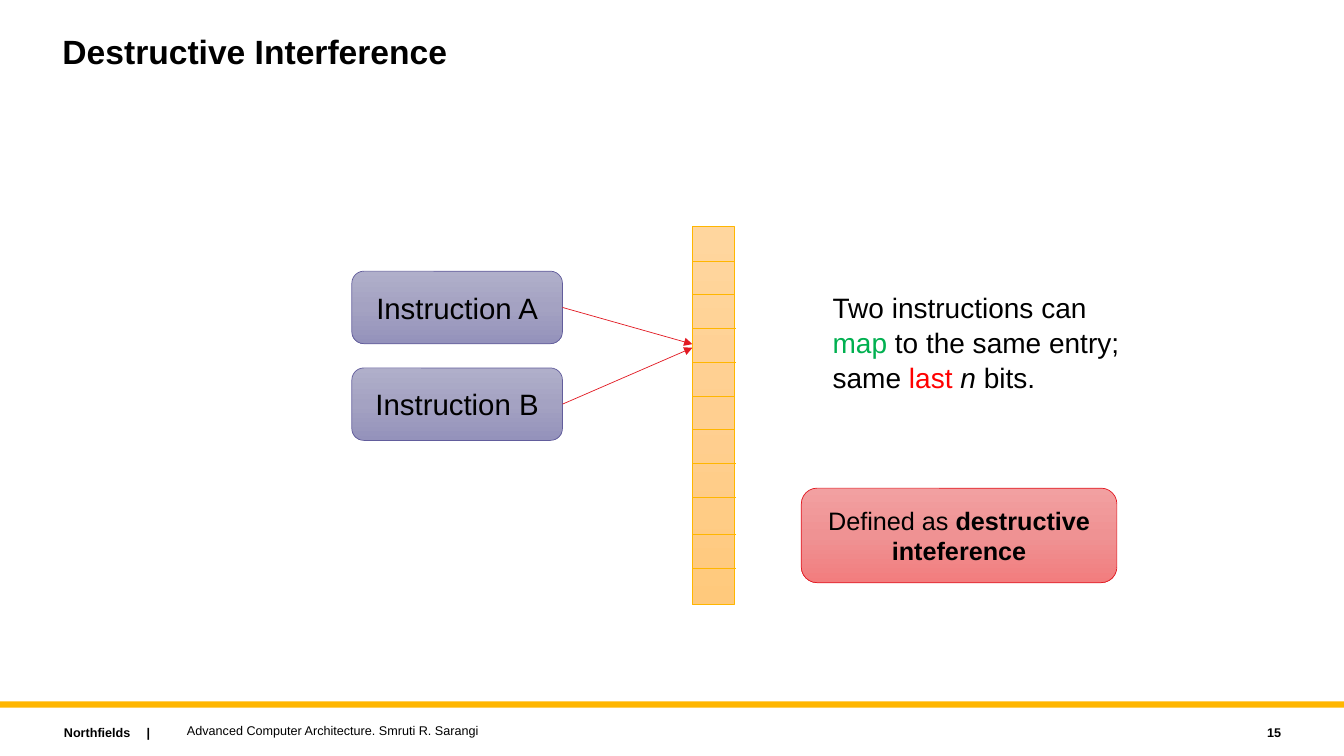
"""Builds the slide on destructive interference."""
from copy import deepcopy
from lxml import etree
from pptx import Presentation
from pptx.dml.color import RGBColor
from pptx.enum import shapes, text
from pptx.oxml import ns
from pptx.util import Pt

INK = {"black": "000000", "gold": "FFB600", "red": "E21A23", "plum": "625D9C",
       "green": "00B050", "bright": "FF0000"}
FADE = {"gold": ("FFD69E", "FFCF90", "FFC97C"),
        "plum": ("B0AFCA", "A4A2C2", "9492BB"),
        "red": ("F2A0A1", "EF9293", "F27D7E")}
KIND = shapes.MSO_SHAPE
ALIGN = text.PP_ALIGN
ANCHOR = text.MSO_ANCHOR


def write(box, runs, size, align=ALIGN.LEFT, anchor=ANCHOR.TOP):
    """Fill a box with runs of (words, colour, bold, italic)."""
    frame = box.text_frame
    frame.word_wrap = True
    frame.auto_size = text.MSO_AUTO_SIZE.NONE
    frame.vertical_anchor = anchor
    para = frame.paragraphs[0]
    para.alignment = align
    para.space_before = Pt(0)
    for words, ink, bold, slant in runs:
        run = para.add_run()
        run.text = words
        font = run.font
        font.name, font.size = "Arial", Pt(size)
        font.bold, font.italic = bold, slant
        font.color.rgb = RGBColor.from_string(INK[ink])
    return para


def block(kind, place, ink):
    """Draw a shape with a vertical fade and a thin outline."""
    box = slide.shapes.add_shape(kind, *map(Pt, place))
    box.shadow.inherit = False
    box.fill.gradient()
    box.fill.gradient_angle = 270
    first = next(box._element.iter(ns.qn("a:gs")))
    first.addnext(deepcopy(first))
    for stop, spot, tint in zip(box.fill.gradient_stops, (0, 0.5, 1), FADE[ink]):
        stop.position = spot
        stop.color.rgb = RGBColor.from_string(tint)
    box.line.color.rgb = RGBColor.from_string(INK[ink])
    box.line.width = Pt(0.5)
    return box


deck = Presentation()
deck.slide_width, deck.slide_height = Pt(960), Pt(540)
slide = deck.slides.add_slide(deck.slide_layouts[1])
title, body = slide.placeholders

rule = slide.shapes.add_shape(KIND.RECTANGLE, Pt(0), Pt(501), Pt(960), Pt(4.5))
rule.shadow.inherit = False
rule.fill.solid()
rule.fill.fore_color.rgb = RGBColor.from_string(INK["gold"])
rule.line.fill.background()

title.left, title.top, title.width, title.height = map(Pt, (37.4, 21.6, 720, 64.8))
head = write(title, [("Destructive Interference", "black", True, False)], 24)
head.line_spacing = 0.9

body.left, body.top, body.width, body.height = map(Pt, (587.5, 203, 236.9, 143.3))
note = [("Two instructions can ", "black", False, False),
        ("map", "green", False, False),
        (" to the same entry; same ", "black", False, False),
        ("last ", "bright", False, False),
        ("n ", "black", False, True),
        ("bits.", "black", False, False)]
para = write(body, note, 20)
para.line_spacing = 1.04
props = para._p.get_or_add_pPr()
props.set("marL", "0")
props.set("indent", "0")
etree.SubElement(props, ns.qn("a:buNone"))

block(KIND.RECTANGLE, (494.6, 162, 29.8, 270), "gold")
wires = []
for row in range(10):
    left = 494.6 + (0.7 if row in (2, 3, 6, 7, 8, 9) else 0)
    y = 186.5 + 24.1 * row + (2.3 if row > 7 else 0)
    wire = slide.shapes.add_connector(
        shapes.MSO_CONNECTOR.STRAIGHT, Pt(left), Pt(y), Pt(left + 30.2), Pt(y))
    wires.append((wire, "gold"))

for name, top, tip in (("A", 193.7, 245.8), ("B", 262.8, 248.4)):
    box = block(KIND.ROUNDED_RECTANGLE, (251.3, top, 150.5, 51.8), "plum")
    write(box, [("Instruction " + name, "black", False, False)], 21,
          ALIGN.CENTER, ANCHOR.MIDDLE)
    wire = slide.shapes.add_connector(
        shapes.MSO_CONNECTOR.STRAIGHT, Pt(401.8), Pt(top + 25.9), Pt(494.6), Pt(tip))
    wire.begin_connect(box, 3)
    wires.append((wire, "red"))

for wire, ink in wires:
    wire.line.color.rgb = RGBColor.from_string(INK[ink])
    wire.line.width = Pt(0.5)
    if ink == "red":
        etree.SubElement(wire.line._get_or_add_ln(), ns.qn("a:tailEnd"), type="triangle")
    etree.SubElement(wire._element.spPr, ns.qn("a:effectLst"))

box = block(KIND.ROUNDED_RECTANGLE, (572.4, 348.7, 225.4, 67.5), "red")
write(box, [("Defined as ", "black", False, False),
            ("destructive inteference", "black", True, False)], 18,
      ALIGN.CENTER, ANCHOR.MIDDLE)

feet = [((38.6, 514.1, 163.4, 18), "Northfields\t|", True, ALIGN.LEFT, ANCHOR.TOP),
        ((126.5, 512.6, 576, 18), "Advanced Computer Architecture. Smruti R. Sarangi",
         False, ALIGN.LEFT, ANCHOR.MIDDLE),
        ((821.5, 514.1, 100.8, 18), "15", True, ALIGN.RIGHT, ANCHOR.MIDDLE)]
for place, words, bold, align, anchor in feet:
    box = slide.shapes.add_textbox(*map(Pt, place))
    para = write(box, [(words, "black", bold, False)], 9, align, anchor)
    if "\t" in words:
        tabs = etree.SubElement(para._p.get_or_add_pPr(), ns.qn("a:tabLst"))
        etree.SubElement(tabs, ns.qn("a:tab"), pos=str(Pt(59)), algn="l")

deck.save("out.pptx")
